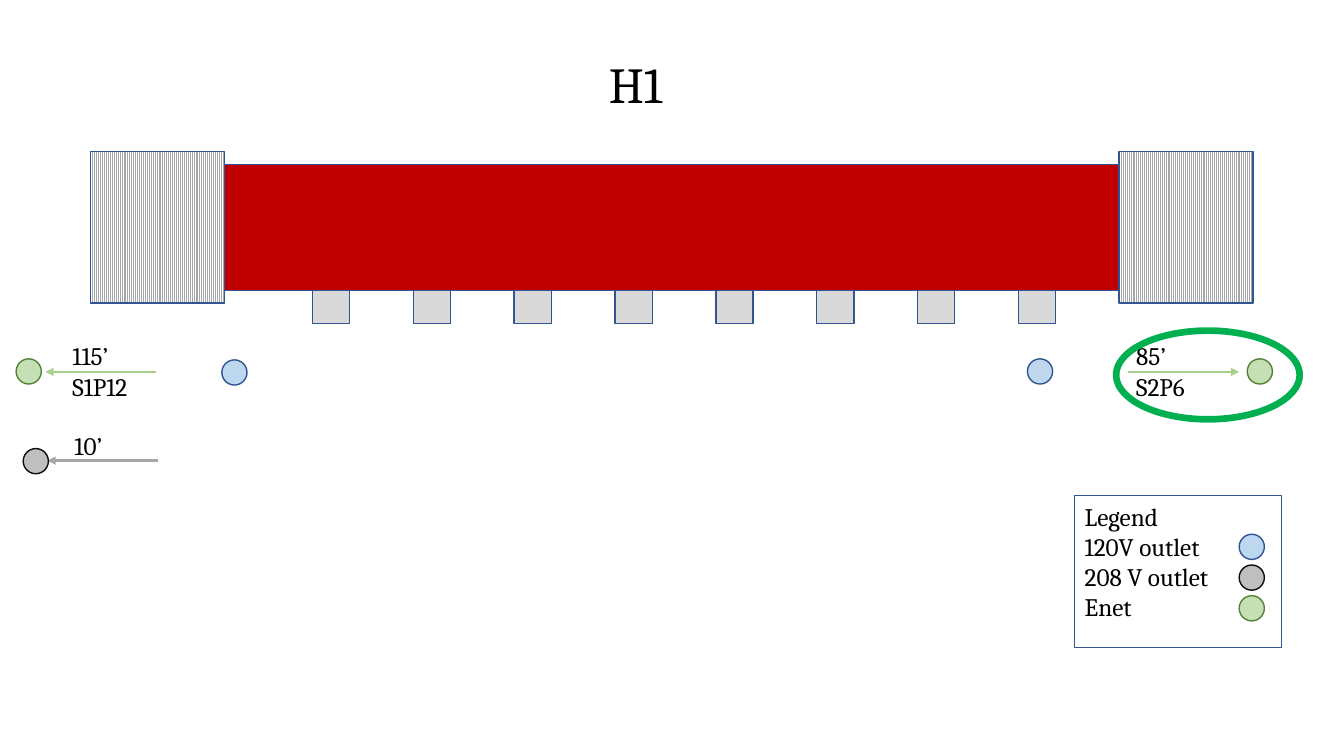
from pptx import Presentation
from pptx.dml.color import RGBColor
from pptx.enum.dml import MSO_PATTERN
from pptx.enum.shapes import MSO_CONNECTOR, MSO_SHAPE
from pptx.enum.text import MSO_ANCHOR, MSO_AUTO_SIZE, PP_ALIGN
from pptx.oxml.ns import qn
from pptx.util import Inches, Pt
from lxml.etree import SubElement

BLACK = RGBColor(0x00, 0x00, 0x00)
WHITE = RGBColor(0xFF, 0xFF, 0xFF)
NAVY = RGBColor(0x32, 0x54, 0x91)
RED = RGBColor(0xC0, 0x00, 0x00)
PALE_GRAY = RGBColor(0xD9, 0xD9, 0xD9)
STRIPE_GRAY = RGBColor(0xA6, 0xA6, 0xA6)
OUTLET_GRAY = RGBColor(0xBF, 0xBF, 0xBF)
NEAR_BLACK = RGBColor(0x0D, 0x0D, 0x0D)
PALE_BLUE = RGBColor(0xBD, 0xD7, 0xEE)
PALE_GREEN = RGBColor(0xC5, 0xE0, 0xB4)
DARK_GREEN = RGBColor(0x54, 0x82, 0x35)
ARROW_GREEN = RGBColor(0xA9, 0xD1, 0x8E)
RING_GREEN = RGBColor(0x00, 0xB0, 0x50)

FONT = "Cambria"
CELL = Inches(1)
DOT = 0.25

TITLE = ("H1", (5.94, 0.48, 0.83, 0.71))
HALL = (2.1, 1.63, 9, 1.25)
BOOTHS = 8
BOOTH_SIZE = (0.37, 0.33)
END_SIZE = (1.33, 1.5)
END_LEFTS = (0.9, 11.1)

OUTLETS = {
    "120V": (PALE_BLUE, NAVY),
    "208V": (OUTLET_GRAY, NEAR_BLACK),
    "Enet": (PALE_GREEN, DARK_GREEN),
}
LEGEND = (["Legend\v120V outlet", "208 V outlet", "Enet"], (10.66, 4.92, 2.05, 1.5))
LEGEND_DOT = (12.29, 5.3)
LEGEND_STEP = 0.305

PLACED_OUTLETS = [
    ("Enet", 0.16, 3.56),
    ("Enet", 12.37, 3.56),
    ("120V", 2.2, 3.57),
    ("120V", 10.19, 3.56),
    ("208V", 0.23, 4.45),
]
RUNS = [
    (["115’", "S1P12"], (0.62, 3.33, 0.89, 0.71), (1.55, 0.45, 3.69), ARROW_GREEN),
    (["85’", "S2P6"], (11.17, 3.33, 0.75, 0.71), (11.19, 12.29, 3.69), ARROW_GREEN),
    (["10’"], (0.64, 4.22, 0.54, 0.4), (1.57, 0.47, 4.57), STRIPE_GRAY),
]
RING = (11.07, 3.28, 1.82, 0.88)


def cells(*values):
    return [round(value * CELL) for value in values]


def add_outline(slide, kind, box, fill=None, line=NAVY, weight=1):
    shape = slide.shapes.add_shape(kind, *cells(*box))
    shape.shadow.inherit = False
    if fill is None:
        shape.fill.background()
    else:
        shape.fill.solid()
        shape.fill.fore_color.rgb = fill
    shape.line.color.rgb = line
    shape.line.width = Pt(weight)
    return shape


def write(frame, lines, size=18, color=BLACK, grow=False):
    frame.word_wrap = False
    frame.vertical_anchor = MSO_ANCHOR.TOP
    if grow:
        frame.auto_size = MSO_AUTO_SIZE.SHAPE_TO_FIT_TEXT
    for index, words in enumerate(lines):
        paragraph = frame.add_paragraph() if index else frame.paragraphs[0]
        paragraph.text = words
        paragraph.alignment = PP_ALIGN.LEFT
        for run in paragraph.runs:
            run.font.name = FONT
            run.font.size = Pt(size)
            run.font.color.rgb = color


def add_label(slide, lines, box, size=18):
    label = slide.shapes.add_textbox(*cells(*box))
    write(label.text_frame, lines, size=size, grow=True)


def add_outlet(slide, outlet, left, top):
    fill, line = OUTLETS[outlet]
    add_outline(slide, MSO_SHAPE.OVAL, (left, top, DOT, DOT), fill, line)


def add_arrow(slide, start, end, level, color):
    arrow = slide.shapes.add_connector(
        MSO_CONNECTOR.STRAIGHT, *cells(start, level, end, level))
    arrow.line.color.rgb = color
    arrow.line.width = Pt(1.75)
    SubElement(arrow.line._get_or_add_ln(), qn("a:tailEnd"), type="triangle")
    SubElement(arrow._element.spPr, qn("a:effectLst"))


def add_hall(slide):
    left, top, width, height = HALL
    add_outline(slide, MSO_SHAPE.RECTANGLE, HALL, RED)
    pitch = width / (BOOTHS + 1)
    for booth in range(1, BOOTHS + 1):
        box = (left + booth * pitch, top + height, *BOOTH_SIZE)
        add_outline(slide, MSO_SHAPE.RECTANGLE, box, PALE_GRAY)
    end_top = top + (height - END_SIZE[1]) / 2
    for end_left in END_LEFTS:
        end = add_outline(slide, MSO_SHAPE.RECTANGLE, (end_left, end_top, *END_SIZE))
        end.fill.patterned()
        end.fill.pattern = MSO_PATTERN.LIGHT_VERTICAL
        end.fill.fore_color.rgb = STRIPE_GRAY
        end.fill.back_color.rgb = WHITE


def add_legend(slide):
    lines, box = LEGEND
    legend = add_outline(slide, MSO_SHAPE.RECTANGLE, box, weight=0.75)
    write(legend.text_frame, lines)
    left, top = LEGEND_DOT
    for row, outlet in enumerate(OUTLETS):
        add_outlet(slide, outlet, left, top + row * LEGEND_STEP)


def main():
    deck = Presentation()
    deck.slide_width, deck.slide_height = cells(13.33, 7.5)
    slide = deck.slides.add_slide(deck.slide_layouts[6])
    add_hall(slide)
    title, title_box = TITLE
    add_label(slide, [title], title_box, size=36)
    add_legend(slide)
    for lines, box, (start, end, level), color in RUNS:
        add_arrow(slide, start, end, level, color)
        add_label(slide, lines, box)
    for outlet, left, top in PLACED_OUTLETS:
        add_outlet(slide, outlet, left, top)
    add_outline(slide, MSO_SHAPE.OVAL, RING, line=RING_GREEN, weight=4.75)
    deck.save("out.pptx")


if __name__ == "__main__":
    main()
